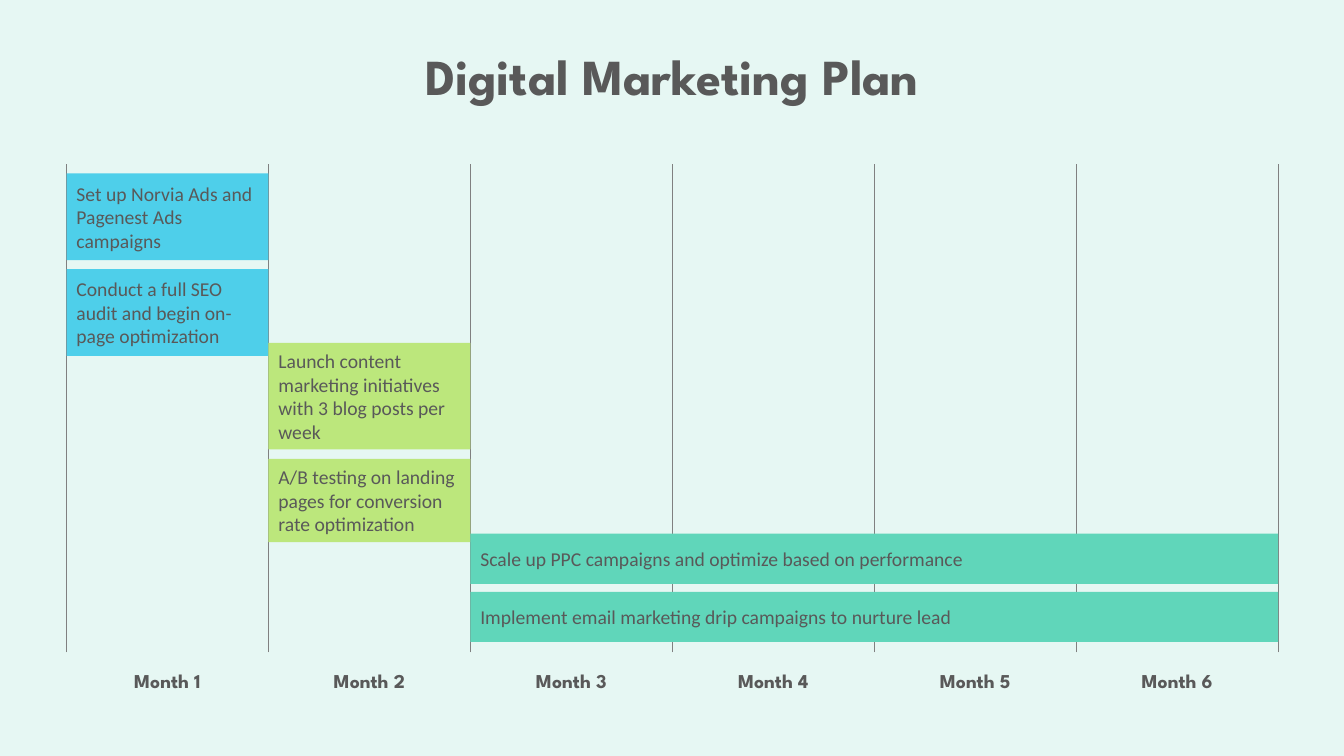
from lxml import etree
from pptx import Presentation
from pptx.dml.color import RGBColor
from pptx.enum import shapes, text
from pptx.oxml.ns import qn
from pptx.util import Pt

MINT = RGBColor(0xE6, 0xF7, 0xF3)
INK = RGBColor(0x59, 0x59, 0x59)
RULE = RGBColor(0x80, 0x80, 0x80)
BLUE = RGBColor(0x4E, 0xCF, 0xEA)
LIME = RGBColor(0xBC, 0xE7, 0x7C)
TEAL = RGBColor(0x60, 0xD6, 0xBA)

LEFT, TOP, BOTTOM = 47.5, 117, 466
STEP, MONTHS = 144.25, 6
LABEL = 100

# First month, months spanned, top, height, fill, task
TASKS = [
    (0, 1, 123.8, 62, BLUE, "Set up Norvia Ads and Pagenest Ads campaigns"),
    (0, 1, 192.3, 62, BLUE,
     "Conduct a full SEO audit and begin on-page optimization"),
    (1, 1, 245, 76, LIME,
     "Launch content marketing initiatives with 3 blog posts per week"),
    (1, 1, 327.7, 59.6, LIME,
     "A/B testing on landing pages for conversion rate optimization"),
    (2, 4, 381.2, 35.8, TEAL,
     "Scale up PPC campaigns and optimize based on performance"),
    (2, 4, 422.7, 35.8, TEAL,
     "Implement email marketing drip campaigns to nurture lead"),
]


def write(shape, words, size, face, bold, align, anchor, fit):
    frame = shape.text_frame
    frame.text = words
    frame.word_wrap = True
    frame.auto_size = fit
    frame.vertical_anchor = anchor
    frame.margin_left = frame.margin_right = Pt(7.2)
    frame.margin_top = frame.margin_bottom = Pt(3.6)
    para = frame.paragraphs[0]
    para.alignment = align
    font = para.runs[0].font
    font.size, font.name, font.bold = Pt(size), face, bold
    font.color.rgb = INK


def head(shape, words, size):
    """Write a centred bold heading that grows with its text."""
    write(shape, words, size, "League Spartan", True, text.PP_ALIGN.CENTER,
          text.MSO_ANCHOR.TOP, text.MSO_AUTO_SIZE.SHAPE_TO_FIT_TEXT)


deck = Presentation()
deck.slide_width, deck.slide_height = Pt(960), Pt(540)
slide = deck.slides.add_slide(deck.slide_layouts[5])
slide.background.fill.solid()
slide.background.fill.fore_color.rgb = MINT

title = slide.shapes.title
title.left, title.top = Pt(101.3), Pt(28.8)
title.width, title.height = Pt(757.4), Pt(51)
head(title, "Digital Marketing Plan", 36)

for i in range(MONTHS + 1):
    x = Pt(LEFT + i * STEP)
    line = slide.shapes.add_connector(
        shapes.MSO_CONNECTOR.STRAIGHT, x, Pt(BOTTOM), x, Pt(TOP))
    line.line.color.rgb = RULE
    line.line.width = Pt(0.5)
    etree.SubElement(line._element.spPr, qn("a:effectLst"))

for i in range(MONTHS):
    x = LEFT + i * STEP + (STEP - LABEL) / 2
    label = slide.shapes.add_textbox(Pt(x), Pt(474.5), Pt(LABEL), Pt(24.3))
    head(label, f"Month {i + 1}", 14)

for start, span, top, height, fill, task in TASKS:
    bar = slide.shapes.add_shape(
        shapes.MSO_SHAPE.RECTANGLE, Pt(LEFT + start * STEP), Pt(top),
        Pt(span * STEP), Pt(height))
    bar.shadow.inherit = False
    bar.fill.solid()
    bar.fill.fore_color.rgb = fill
    bar.line.fill.background()
    write(bar, task, 14, "Calibri", False, text.PP_ALIGN.LEFT,
          text.MSO_ANCHOR.MIDDLE, text.MSO_AUTO_SIZE.NONE)

deck.save("out.pptx")
